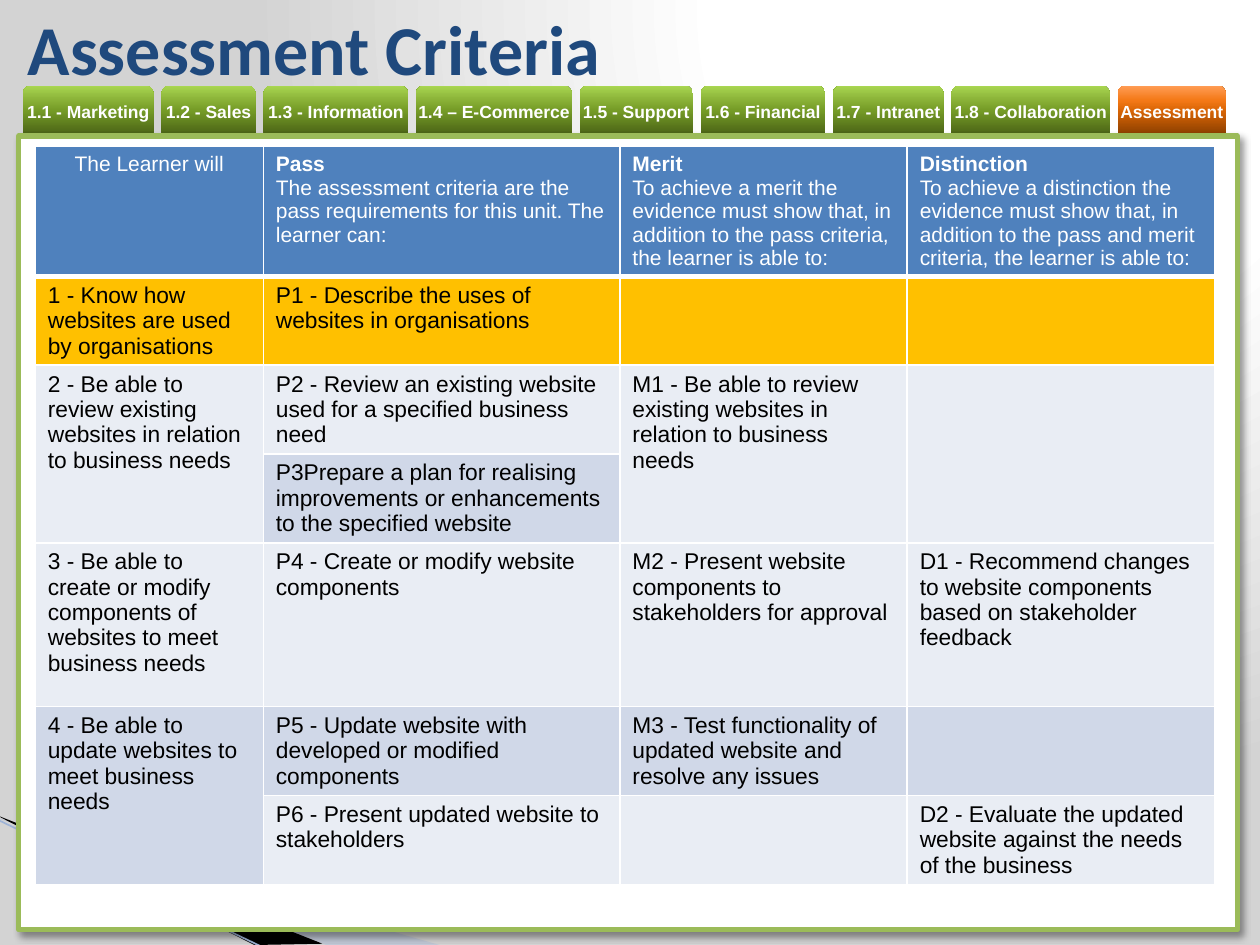
from lxml.etree import SubElement
from pptx import Presentation
from pptx.dml.color import RGBColor
from pptx.enum.shapes import MSO_CONNECTOR, MSO_SHAPE
from pptx.enum.text import MSO_ANCHOR, PP_ALIGN
from pptx.oxml import parse_xml
from pptx.oxml.ns import nsdecls, qn
from pptx.util import Inches, Pt

TITLE = "Assessment Criteria"
TABS = [
    ("1.1 - Marketing", 1.04), ("1.2 - Sales", 0.75), ("1.3 - Information", 1.15),
    ("1.4 – E-Commerce", 1.24), ("1.5 - Support", 0.9), ("1.6 - Financial", 0.99),
    ("1.7 - Intranet", 0.88), ("1.8 - Collaboration", 1.26), ("Assessment", 0.86),
]
TAB_LEFT, TAB_GAP = 0.18, 0.06
GREEN = [(0, "4A6316"), (50, "769C27"), (70, "89B137"), (100, "A9D651")]
ORANGE = [(0, "8B3F00"), (50, "DA6606"), (70, "F47917"), (100, "FF9C54")]
BACKDROP = [(0, "FFFFFF"), (40, "FFFFFF"), (100, "D3D3D3")]
UPWARD = '<a:lin ang="16200000" scaled="0"/>'
FROM_TOP_RIGHT = '<a:path path="circle"><a:fillToRect l="65000" b="98000"/></a:path>'
SWOOSHES = [
    ([(-0.01, 6.5), (3.49, 7.5), (2.59, 7.5), (-0.01, 6.49)], "A7B9DB", 40),
    ([(0, 6.48), (2.56, 7.49), (2.02, 7.5), (0.01, 6.49)], "000000", 100),
]
COLUMN_WIDTHS = [1.81, 2.83, 2.28, 2.44]
ROWS = [
    (1.02, "4F81BD", [
        "The Learner will",
        "Pass\nThe assessment criteria are the pass requirements for this unit. The learner can:",
        "Merit\nTo achieve a merit the\nevidence must show that, in addition to the pass criteria, "
        "the learner is able to:",
        "Distinction\nTo achieve a distinction the evidence must show that, in addition to the pass "
        "and merit criteria, the learner is able to:"]),
    (0.7, "FFC000", [
        "1 - Know how websites are used by organisations",
        "P1 - Describe the uses of websites in organisations", "", ""]),
    (0.7, "E9EDF4", [
        "2 - Be able to review existing websites in relation to business needs",
        "P2 - Review an existing website used for a specified business need",
        "M1 - Be able to review existing websites in relation to business needs", ""]),
    (0.7, "D0D8E8", [
        "", "P3Prepare a plan for realising improvements or enhancements to the specified website",
        "", ""]),
    (1.3, "E9EDF4", [
        "3 - Be able to create or modify components of websites to meet business needs",
        "P4 - Create or modify website components",
        "M2 - Present website components to stakeholders for approval",
        "D1 - Recommend changes to website components based on stakeholder feedback"]),
    (0.7, "D0D8E8", [
        "4 - Be able to update websites to meet business needs",
        "P5 - Update website with developed or modified components",
        "M3 - Test functionality of updated website and resolve any issues", ""]),
    (0.7, "E9EDF4", [
        "", "P6 - Present updated website to stakeholders", "",
        "D2 - Evaluate the updated website against the needs of the business"]),
]
TWO_ROW_CELLS = [(2, 0), (2, 2), (2, 3), (5, 0)]


def rgb(value):
    return RGBColor.from_string(value)


def style(paragraph, size, color, bold=False, face="Arial"):
    for run in paragraph.runs:
        font = run.font
        font.name, font.size, font.bold = face, Pt(size), bold
        font.color.rgb = rgb(color)


def set_gradient(properties, stops, direction):
    stop_xml = "".join(
        f'<a:gs pos="{position * 1000}"><a:srgbClr val="{color}"/></a:gs>' for position, color in stops)
    gradient = parse_xml(
        f'<a:gradFill {nsdecls("a")} rotWithShape="1"><a:gsLst>{stop_xml}</a:gsLst>{direction}</a:gradFill>')
    placeholder_fill = properties.find(qn("a:solidFill"))
    properties.replace(placeholder_fill, gradient)


def set_border(cell, side, width):
    cell.fill.background()
    border = parse_xml(
        f'<a:ln{side} {nsdecls("a")} w="{Pt(width)}"><a:solidFill><a:srgbClr val="FFFFFF"/>'
        f'</a:solidFill></a:ln{side}>')
    properties = cell.fill._xPr
    properties.insert(len(properties) - 1, border)


def add_swoosh(slide, points, color, opacity):
    builder = slide.shapes.build_freeform(
        Inches(points[0][0]), Inches(points[0][1]), scale=1.0)
    builder.add_line_segments([(Inches(x), Inches(y)) for x, y in points[1:]], close=True)
    swoosh = builder.convert_to_shape()
    swoosh.shadow.inherit = False
    swoosh.fill.solid()
    swoosh.fill.fore_color.rgb = rgb(color)
    swoosh.line.fill.background()
    if opacity < 100:
        fill_color = swoosh.element.spPr.find(qn("a:solidFill"))[0]
        SubElement(fill_color, qn("a:alpha")).set("val", str(opacity * 1000))


def add_tab(slide, label, left, width, stops):
    tab = slide.shapes.add_shape(
        MSO_SHAPE.ROUND_2_SAME_RECTANGLE, Inches(left), Inches(0.68), Inches(width), Inches(0.39))
    tab.shadow.inherit = False
    tab.fill.solid()
    set_gradient(tab.element.spPr, stops, UPWARD)
    tab.line.fill.background()
    frame = tab.text_frame
    frame.margin_left = frame.margin_right = frame.margin_top = frame.margin_bottom = 0
    frame.vertical_anchor = MSO_ANCHOR.MIDDLE
    frame.text = label
    frame.paragraphs[0].alignment = PP_ALIGN.CENTER
    style(frame.paragraphs[0], 10, "FFFFFF", True)


def add_panel(slide):
    panel = slide.shapes.add_shape(
        MSO_SHAPE.RECTANGLE, Inches(0.15), Inches(1.08), Inches(9.67), Inches(6.3))
    panel.fill.solid()
    panel.fill.fore_color.rgb = rgb("FFFFFF")
    panel.line.color.rgb = rgb("9BBB59")
    panel.line.width = Pt(3)
    panel.shadow.inherit = False
    effects = panel.element.spPr.find(qn("a:effectLst"))
    effects.append(parse_xml(
        f'<a:outerShdw {nsdecls("a")} blurRad="{Pt(4)}" dist="{Pt(3)}" dir="2700000" algn="tl" '
        'rotWithShape="0"><a:srgbClr val="000000"><a:alpha val="40000"/></a:srgbClr></a:outerShdw>'))


def add_criteria(slide):
    criteria = slide.shapes.add_table(
        len(ROWS), len(COLUMN_WIDTHS), Inches(0.28), Inches(1.16),
        Inches(sum(COLUMN_WIDTHS)), Inches(sum(row[0] for row in ROWS))).table
    for column, width in zip(criteria.columns, COLUMN_WIDTHS):
        column.width = Inches(width)
    for row, (height, fill, texts) in enumerate(ROWS):
        criteria.rows[row].height = Inches(height)
        header = row == 0
        borders = {"L": 1, "R": 1, "T": 3 if row == 1 else 1, "B": 3 if header else 1}
        for column, text in enumerate(texts):
            cell = criteria.cell(row, column)
            for side, width in borders.items():
                set_border(cell, side, width)
            cell.fill.solid()
            cell.fill.fore_color.rgb = rgb(fill)
            cell.text_frame.text = text
            for index, paragraph in enumerate(cell.text_frame.paragraphs):
                if header:
                    style(paragraph, 12, "FFFFFF", index == 0 and column > 0)
                else:
                    style(paragraph, 13, "000000")
    criteria.cell(0, 0).text_frame.paragraphs[0].alignment = PP_ALIGN.CENTER
    for row, column in TWO_ROW_CELLS:
        criteria.cell(row, column).merge(criteria.cell(row + 1, column))


def main():
    deck = Presentation()
    deck.slide_width, deck.slide_height = Inches(10), Inches(7.5)
    slide = deck.slides.add_slide(deck.slide_layouts[5])
    slide.background.fill.solid()
    set_gradient(slide.element.find(".//" + qn("p:bgPr")), BACKDROP, FROM_TOP_RIGHT)

    for points, color, opacity in SWOOSHES:
        add_swoosh(slide, points, color, opacity)
    edge = slide.shapes.add_connector(
        MSO_CONNECTOR.STRAIGHT, Inches(-0.01), Inches(6.51), Inches(2.09), Inches(7.52))
    edge.line.color.rgb = rgb("9EB3D6")
    edge.line.width = Pt(0.95)
    SubElement(edge.element.spPr, qn("a:effectLst"))

    left = TAB_LEFT
    for label, width in TABS:
        add_tab(slide, label, left, width, ORANGE if label == "Assessment" else GREEN)
        left += width + TAB_GAP
    add_panel(slide)

    title = slide.shapes.title
    title.left, title.top, title.width, title.height = (
        Inches(0.12), Inches(0), Inches(8.43), Inches(0.76))
    title.text_frame.text = TITLE
    title.text_frame.vertical_anchor = MSO_ANCHOR.MIDDLE
    title.text_frame.paragraphs[0].alignment = PP_ALIGN.LEFT
    style(title.text_frame.paragraphs[0], 40, "1F497D", True, "Calibri")

    add_criteria(slide)
    deck.save("out.pptx")


if __name__ == "__main__":
    main()
